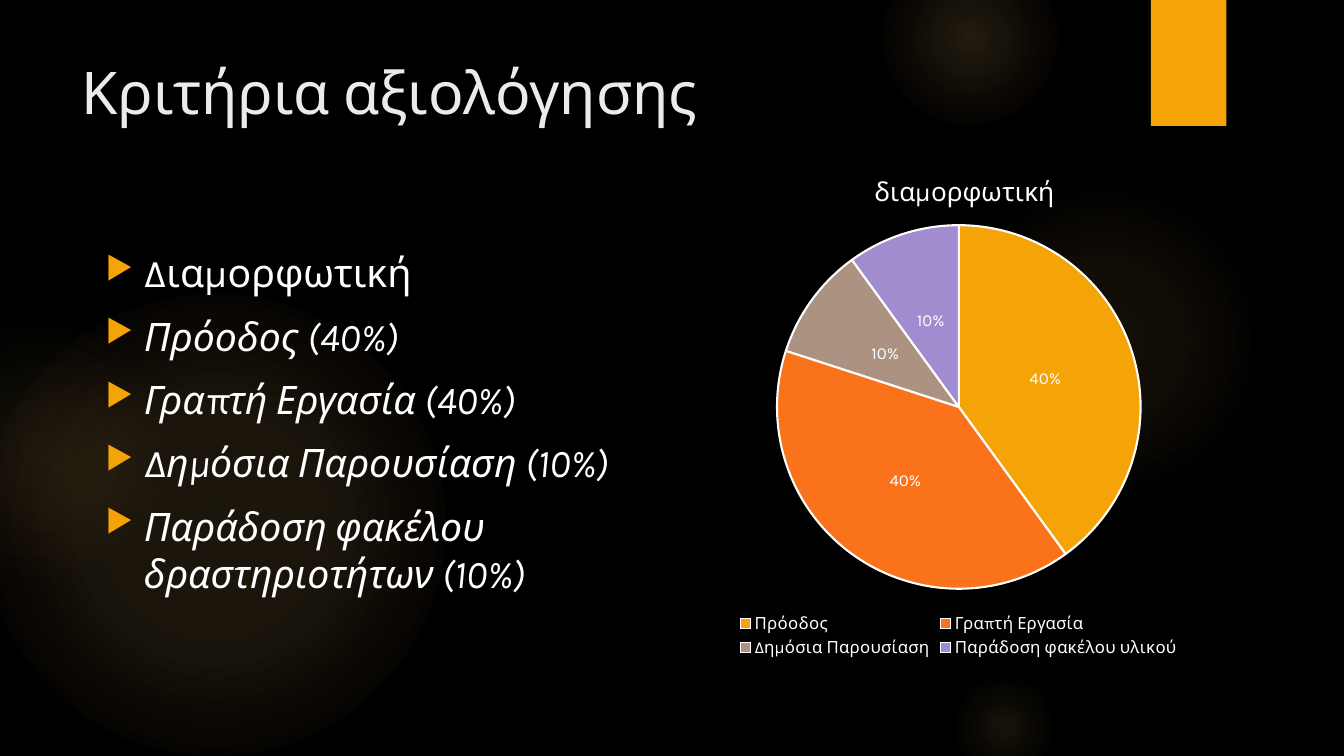
from lxml import etree
from pptx import Presentation
from pptx.chart.data import CategoryChartData
from pptx.dml.color import RGBColor
from pptx.enum.chart import XL_CHART_TYPE, XL_LABEL_POSITION, XL_LEGEND_POSITION
from pptx.enum.shapes import MSO_SHAPE
from pptx.oxml import parse_xml
from pptx.oxml.ns import nsdecls, qn
from pptx.util import Inches, Pt

PIE = XL_CHART_TYPE.PIE
CENTER = XL_LABEL_POSITION.CENTER
BOTTOM = XL_LEGEND_POSITION.BOTTOM
OVAL = MSO_SHAPE.OVAL
RECTANGLE = MSO_SHAPE.RECTANGLE

BLACK = RGBColor(0x00, 0x00, 0x00)
WHITE = RGBColor(0xFF, 0xFF, 0xFF)
PALE = RGBColor(0xEB, 0xEB, 0xEB)
AMBER = RGBColor(0xF5, 0xA4, 0x08)
ORANGE = RGBColor(0xFA, 0x73, 0x1A)
TAUPE = RGBColor(0xAB, 0x92, 0x81)
VIOLET = RGBColor(0xA1, 0x8C, 0xD0)
GLOW = RGBColor(0xFA, 0xC9, 0x6A)
EMBER = RGBColor(0xF5, 0x9B, 0x74)

FONT = "Karla"
UNIT = Inches(1) // 12
COLUMNS, ROWS = 160, 90

GLOWS = [
    (-2, 35, 55, [(0, GLOW, 11), (36, GLOW, 10), (75, GLOW, 0)]),
    (-11, 38, 31, [(0, GLOW, 8), (36, GLOW, 5), (71, EMBER, 0)]),
    (113, 22, 37, [(0, GLOW, 7), (36, GLOW, 6), (69, GLOW, 0)]),
    (105, -6, 21, [(0, GLOW, 14), (36, GLOW, 7), (73, GLOW, 0)]),
    (113, 80, 13, [(0, GLOW, 10), (31, GLOW, 5), (66, GLOW, 0)]),
]
CRITERIA = [
    "Διαμορφωτική",
    "Πρόοδος (40%)",
    "Γραπτή Εργασία (40%)",
    "Δημόσια Παρουσίαση (10%)",
    "Παράδοση φακέλου δραστηριοτήτων (10%)",
]
SHARES = [
    ("Πρόοδος", 40, AMBER),
    ("Γραπτή Εργασία", 40, ORANGE),
    ("Δημόσια Παρουσίαση", 10, TAUPE),
    ("Παράδοση φακέλου υλικού", 10, VIOLET),
]


def grid(*box):
    return [round(length * UNIT) for length in box]


def set_font(font, size, color=WHITE, italic=False):
    font.name = FONT
    font.size = Pt(size)
    font.color.rgb = color
    font.italic = italic


def add_bullet(paragraph):
    properties = paragraph._p.get_or_add_pPr()
    properties.set("marL", str(Inches(0.38)))
    properties.set("indent", str(-Inches(0.38)))
    color = etree.SubElement(properties, qn("a:buClr"))
    etree.SubElement(color, qn("a:srgbClr"), val=str(AMBER))
    etree.SubElement(properties, qn("a:buSzPct"), val="80000")
    etree.SubElement(properties, qn("a:buChar"), char="▶")


def add_text(slide, box, lines, *, size, color=WHITE, bullets=False, italic_from=None,
             before=0, after=0):
    frame = slide.shapes.add_textbox(*grid(*box)).text_frame
    frame.word_wrap = True
    for index, line in enumerate(lines):
        paragraph = frame.add_paragraph() if index else frame.paragraphs[0]
        if bullets:
            add_bullet(paragraph)
        paragraph.space_before = Pt(before if index else 0)
        paragraph.space_after = Pt(after)
        run = paragraph.add_run()
        run.text = line
        italic = italic_from is not None and index >= italic_from
        set_font(run.font, size, color, italic)


def add_filled_shape(slide, kind, box, color):
    shape = slide.shapes.add_shape(kind, *grid(*box))
    shape.shadow.inherit = False
    shape.line.fill.background()
    shape.fill.solid()
    shape.fill.fore_color.rgb = color
    return shape


def add_glow(slide, left, top, diameter, stops):
    shape = add_filled_shape(slide, OVAL, (left, top, diameter, diameter), GLOW)
    stop_xml = "".join(
        f'<a:gs pos="{position * 1000}"><a:srgbClr val="{color}">'
        f'<a:alpha val="{opacity * 1000}"/></a:srgbClr></a:gs>'
        for position, color, opacity in stops
    )
    gradient = parse_xml(
        f'<a:gradFill {nsdecls("a")} rotWithShape="1"><a:gsLst>{stop_xml}</a:gsLst>'
        '<a:path path="circle"><a:fillToRect l="50000" t="50000" r="50000" b="50000"/>'
        '</a:path></a:gradFill>'
    )
    properties = shape._element.spPr
    properties.replace(properties.find(qn("a:solidFill")), gradient)


def add_background(slide):
    slide.background.fill.solid()
    slide.background.fill.fore_color.rgb = BLACK
    for glow in GLOWS:
        add_glow(slide, *glow)
    add_filled_shape(slide, RECTANGLE, (137, 0, 9, 15), AMBER)


def place(parent, anchor, target=None, **shares):
    layout = parent.find(qn("c:layout"))
    if layout is None:
        layout = etree.Element(qn("c:layout"))
        anchor.addnext(layout)
    for child in list(layout):
        layout.remove(child)
    manual = etree.SubElement(layout, qn("c:manualLayout"))
    if target:
        etree.SubElement(manual, qn("c:layoutTarget"), val=target)
    for mode in ("xMode", "yMode"):
        etree.SubElement(manual, qn(f"c:{mode}"), val="edge")
    for name, share in shares.items():
        etree.SubElement(manual, qn(f"c:{name}"), val=str(share))


def add_pie(slide, box):
    data = CategoryChartData(number_format="0")
    data.categories = [name for name, _, _ in SHARES]
    data.add_series("διαμορφωτική", [value for _, value, _ in SHARES])
    chart = slide.shapes.add_chart(PIE, *grid(*box), data).chart
    set_font(chart.font, 10)

    chart.has_title = True
    title_frame = chart.chart_title.text_frame
    title_frame.text = "διαμορφωτική"
    title_font = title_frame.paragraphs[0].runs[0].font
    set_font(title_font, 18.6)
    title_font.bold = False
    title = chart._chartSpace.chart.find(qn("c:title"))
    place(title, title.find(qn("c:tx")), x=0.33, y=0.04)

    chart.has_legend = True
    chart.legend.position = BOTTOM
    chart.legend.include_in_layout = False
    set_font(chart.legend.font, 12)

    plot = chart.plots[0]
    plot.vary_by_categories = True
    for index, (_, _, color) in enumerate(SHARES):
        slice_format = plot.series[0].points[index].format
        slice_format.fill.solid()
        slice_format.fill.fore_color.rgb = color
        slice_format.line.color.rgb = WHITE
        slice_format.line.width = Pt(1.5)

    plot.has_data_labels = True
    labels = plot.data_labels
    labels.show_percentage = True
    labels.show_value = False
    labels.number_format = "0%"
    labels.number_format_is_linked = False
    labels.position = CENTER
    set_font(labels.font, 12)
    area = chart._chartSpace.chart.plotArea
    place(area, area, "inner", x=0.155, y=0.146, w=0.69, h=0.71)


def main():
    presentation = Presentation()
    presentation.slide_width = COLUMNS * UNIT
    presentation.slide_height = ROWS * UNIT
    slide = presentation.slides.add_slide(presentation.slide_layouts[6])
    add_background(slide)
    add_text(slide, (8.5, 6, 123.5, 18.4), ["Κριτήρια αξιολόγησης"], size=42, color=PALE)
    add_text(slide, (11.4, 29, 68.8, 43.6), CRITERIA, size=28, bullets=True,
             italic_from=1, before=5.6, after=6)
    add_pie(slide, (82.9, 17.8, 62.5, 61))
    presentation.save("out.pptx")


if __name__ == "__main__":
    main()
